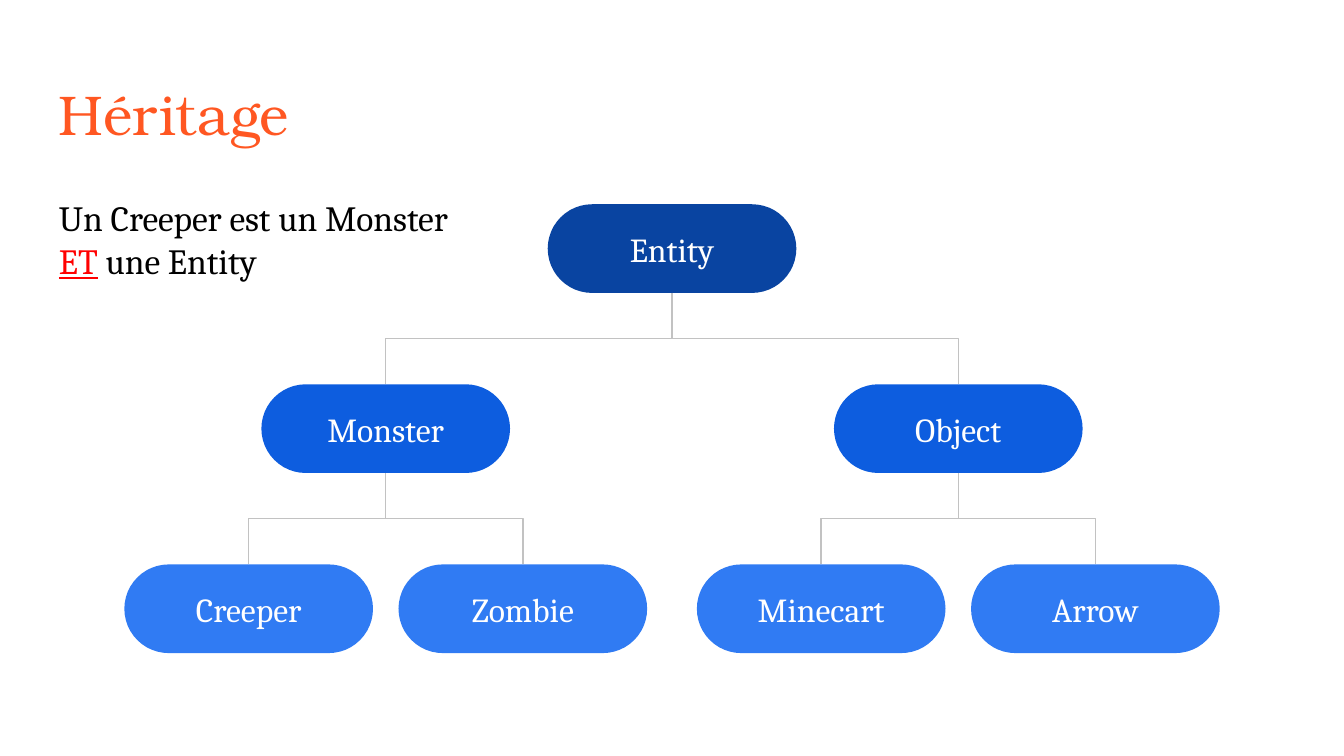
import pptx
import pptx.util
import pptx.dml.color
import pptx.enum.shapes
import pptx.enum.text
import pptx.oxml.ns
import lxml.etree

Inches = pptx.util.Inches
Pt = pptx.util.Pt

TITLE = "Héritage"
NOTE = [("Un Creeper est un Monster ", "000000", False),
        ("ET", "FF0000", True),
        (" une Entity", "000000", False)]
TREE = ("Entity", [
    ("Monster", [("Creeper", []), ("Zombie", [])]),
    ("Object", [("Minecart", []), ("Arrow", [])]),
])
FILLS = ["0944A1", "0D5DDF", "307BF3"]
SPREAD = [2.13, 1.02]
PAGE = 10
MID, TOP, STEP = PAGE / 2, 1.52, 1.34
WIDE, HIGH = 1.85, 0.66


def color(code):
    return pptx.dml.color.RGBColor.from_string(code)


def style(run, face, size, code):
    run.font.name = face
    run.font.size = Pt(size)
    run.font.color.rgb = color(code)


def pad(frame):
    frame.margin_left = frame.margin_right = Inches(0.1)
    frame.margin_top = frame.margin_bottom = Inches(0.1)


def add_text(slide, left, top, width, height):
    box = slide.shapes.add_textbox(*map(Inches, (left, top, width, height)))
    frame = box.text_frame
    frame.word_wrap = True
    pad(frame)
    return frame


def add_node(slide, name, mid, level):
    node = slide.shapes.add_shape(
        pptx.enum.shapes.MSO_SHAPE.ROUNDED_RECTANGLE,
        Inches(mid - WIDE / 2), Inches(TOP + level * STEP),
        Inches(WIDE), Inches(HIGH))
    node.adjustments[0] = 0.5
    node.shadow.inherit = False
    node.fill.solid()
    node.fill.fore_color.rgb = color(FILLS[level])
    node.line.fill.background()
    frame = node.text_frame
    pad(frame)
    frame.vertical_anchor = pptx.enum.text.MSO_ANCHOR.MIDDLE
    frame.text = name
    para = frame.paragraphs[0]
    para.alignment = pptx.enum.text.PP_ALIGN.CENTER
    style(para.runs[0], "Cambria", 18, "FFFFFF")
    return node


def add_link(slide, upper, lower, start, end, level):
    link = slide.shapes.add_connector(
        pptx.enum.shapes.MSO_CONNECTOR.ELBOW, 0, 0, 0, 0)
    link.begin_connect(upper, 2)
    link.end_connect(lower, 0)
    drop, span = STEP - HIGH, abs(end - start)
    mid_y = TOP + level * STEP + HIGH + drop / 2
    link.left = Inches((start + end - drop) / 2)
    link.top = Inches(mid_y - span / 2)
    link.width, link.height = Inches(drop), Inches(span)
    right = end > start
    props = link._element.spPr
    props.xfrm.set("rot", "16200000" if right else "5400000")
    props.xfrm.set("flipH", "1" if right else "0")
    props.xfrm.set("flipV", "0")
    link.line.color.rgb = color("C2C2C2")
    link.line.width = Pt(0.75)
    lxml.etree.SubElement(props, pptx.oxml.ns.qn("a:effectLst"))


def add_tree(slide, tree, mid, level=0):
    name, kids = tree
    node = add_node(slide, name, mid, level)
    for side, kid in zip((-1, 1), kids):
        spot = mid + side * SPREAD[level]
        child = add_tree(slide, kid, spot, level + 1)
        add_link(slide, node, child, mid, spot, level)
    return node


def main():
    deck = pptx.Presentation()
    deck.slide_width, deck.slide_height = Inches(PAGE), Inches(PAGE * 9 / 16)
    slide = deck.slides.add_slide(deck.slide_layouts[6])

    title = add_text(slide, 0.34, 0.49, 9.32, 0.63)
    title.text = TITLE
    style(title.paragraphs[0].runs[0], "TeX Gyre Bonum", 30, "FF5722")

    add_tree(slide, TREE, MID)

    note = add_text(slide, 0.34, 1.36, 3.22, 0.84)
    for words, code, under in NOTE:
        run = note.paragraphs[0].add_run()
        run.text = words
        style(run, "Cambria", 19, code)
        run.font.underline = under

    deck.save("out.pptx")


if __name__ == "__main__":
    main()
